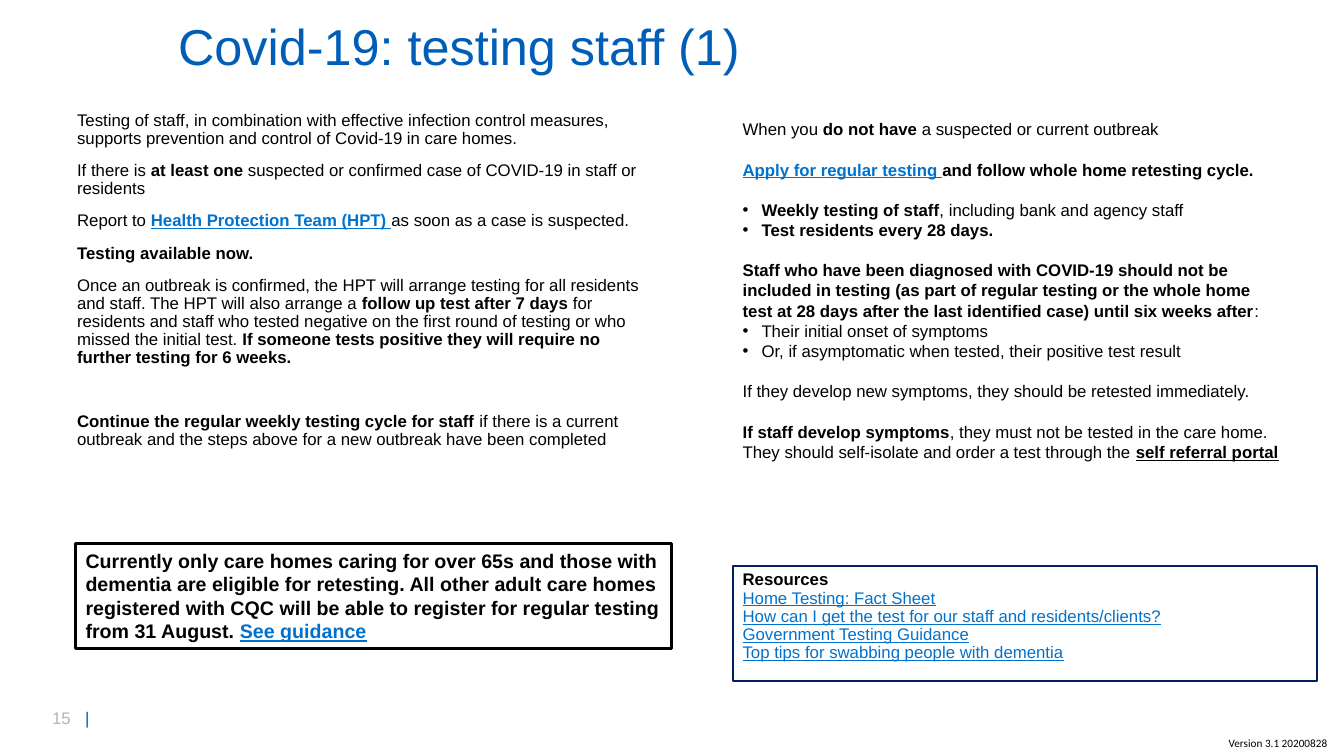
from lxml.etree import SubElement
from pptx import Presentation
from pptx.dml.color import RGBColor
from pptx.enum.shapes import MSO_SHAPE
from pptx.enum.text import MSO_ANCHOR, MSO_AUTO_SIZE, PP_ALIGN
from pptx.oxml.ns import qn
from pptx.util import Pt

BLACK, BLUE, LINK, NAVY, GREY = "000000", "005EB8", "0072CE", "002060", "ADB6BE"
LINE = 14.4  # height of one 12 pt line

# Run styles: bold, underlined, colour
PLAIN = (False, False, BLACK)
BOLD = (True, False, BLACK)
BOLD_LINK = (True, True, LINK)
PLAIN_LINK = (False, True, LINK)
BOLD_UNDERLINED = (True, True, BLACK)


def colour(value):
    return RGBColor.from_string(value)


def add_runs(paragraph, runs, size=12, font="Arial"):
    for text, (bold, underlined, ink) in runs:
        run = paragraph.add_run()
        run.text = text
        run.font.name, run.font.size = font, Pt(size)
        run.font.bold, run.font.underline = bold, underlined
        run.font.color.rgb = colour(ink)


def add_bullet(paragraph, indent=13.5):
    properties = paragraph._p.get_or_add_pPr()
    properties.set("marL", str(Pt(indent)))
    properties.set("indent", str(-Pt(indent)))
    SubElement(properties, qn("a:buFont"), typeface="Arial")
    SubElement(properties, qn("a:buChar"), char="•")


def fill_frame(frame, paragraphs, spacing=1.0, size=12):
    """Each paragraph is (space before, bulleted, runs)."""
    frame.word_wrap = True
    for number, (before, bulleted, runs) in enumerate(paragraphs):
        paragraph = frame.add_paragraph() if number else frame.paragraphs[0]
        paragraph.alignment = PP_ALIGN.LEFT
        paragraph.line_spacing = spacing
        paragraph.space_before = Pt(before)
        if bulleted:
            add_bullet(paragraph)
        add_runs(paragraph, runs, size)


def add_text_box(slide, box):
    return slide.shapes.add_textbox(*map(Pt, box)).text_frame


def add_outlined_box(slide, box, line, weight, anchor):
    panel = slide.shapes.add_shape(MSO_SHAPE.RECTANGLE, *map(Pt, box))
    panel.shadow.inherit = False
    panel.fill.background()
    panel.line.color.rgb = colour(line)
    panel.line.width = Pt(weight)
    panel.text_frame.vertical_anchor = anchor
    return panel.text_frame


def add_title(slide, box):
    title = slide.shapes.title
    title.left, title.top, title.width, title.height = map(Pt, box)
    frame = title.text_frame
    frame.auto_size = MSO_AUTO_SIZE.NONE
    frame.vertical_anchor = MSO_ANCHOR.MIDDLE
    fill_frame(frame, [(0, False, [("Covid-19: testing staff (1)", (False, False, BLUE))])],
               spacing=0.9, size=36)


def add_outbreak_column(slide, box):
    fill_frame(add_text_box(slide, box), [
        (0, False, [("Testing of staff, in combination with effective infection control measures, "
                     "supports prevention and control of Covid-19 in care homes.", PLAIN)]),
        (10, False, [("If there is ", PLAIN), ("at least one ", BOLD),
                     ("suspected or confirmed case of COVID-19 in staff or residents", PLAIN)]),
        (10, False, [("Report to ", PLAIN), ("Health Protection Team (HPT) ", BOLD_LINK),
                     ("as soon as a case is suspected.", PLAIN)]),
        (10, False, [("Testing available now.", BOLD)]),
        (10, False, [("Once an outbreak is confirmed, the HPT will arrange testing for all residents "
                      "and staff. The HPT will also arrange a ", PLAIN),
                     ("follow up test after 7 days ", BOLD),
                     ("for residents and staff who tested negative on the first round of testing "
                      "or who missed the initial test. ", PLAIN),
                     ("If someone tests positive they will require no further testing for 6 weeks.",
                      BOLD)]),
        (32.8, False, [("Continue the regular weekly testing cycle for staff ", BOLD),
                       ("if there is a current outbreak and the steps above for a new outbreak "
                        "have been completed", PLAIN)]),
    ], spacing=0.9)


def add_no_outbreak_column(slide, box):
    fill_frame(add_text_box(slide, box), [
        (0, False, [("When you ", PLAIN), ("do not have ", BOLD),
                    ("a suspected or current outbreak", PLAIN)]),
        (LINE, False, [("Apply for regular testing ", BOLD_LINK),
                       ("and follow whole home retesting cycle.", BOLD)]),
        (LINE, True, [("Weekly testing of staff", BOLD),
                      (", including bank and agency staff", PLAIN)]),
        (0, True, [("Test residents every 28 days.", BOLD)]),
        (LINE, False, [("Staff who have been diagnosed with COVID-19 should not be included in "
                        "testing (as part of regular testing or the whole home test at 28 days "
                        "after the last identified case) until six weeks after", BOLD),
                       (":", PLAIN)]),
        (0, True, [("Their initial onset of symptoms", PLAIN)]),
        (0, True, [("Or, if asymptomatic when tested, their positive test result", PLAIN)]),
        (LINE, False, [("If they develop new symptoms, they should be retested immediately.", PLAIN)]),
        (LINE, False, [("If staff develop symptoms", BOLD),
                       (", they must not be tested in the care home. They should self-isolate "
                        "and order a test through the ", PLAIN),
                       ("self referral portal", BOLD_UNDERLINED)]),
    ])


def add_eligibility_notice(slide, box):
    frame = add_outlined_box(slide, box, BLACK, 2.25, MSO_ANCHOR.MIDDLE)
    fill_frame(frame, [(0, False, [
        ("Currently only care homes caring for over 65s and those with dementia are eligible for "
         "retesting. All other adult care homes registered with CQC will be able to register for "
         "regular testing from 31 August. ", BOLD),
        ("See guidance", BOLD_LINK)])], size=14)


def add_resources(slide, box):
    links = ["Home Testing: Fact Sheet",
             "How can I get the test for our staff and residents/clients?",
             "Government Testing Guidance",
             "Top tips for swabbing people with dementia"]
    frame = add_outlined_box(slide, box, NAVY, 1.5, MSO_ANCHOR.TOP)
    fill_frame(frame, [(0, False, [("Resources", BOLD)])]
               + [(0, False, [(link, PLAIN_LINK)]) for link in links], spacing=0.9)


def add_page_number(slide, box):
    paragraph = add_text_box(slide, box).paragraphs[0]
    stops = SubElement(paragraph._p.get_or_add_pPr(), qn("a:tabLst"))
    SubElement(stops, qn("a:tab"), pos=str(Pt(23.5)), algn="l")
    add_runs(paragraph, [("15\t", (False, False, GREY)), ("|", (False, False, BLUE))])


def add_version(slide, box):
    frame = add_text_box(slide, box)
    frame.word_wrap = False
    add_runs(frame.paragraphs[0], [("Version 3.1 20200828", PLAIN)], size=8, font="Calibri")


def main():
    deck = Presentation()
    deck.slide_width, deck.slide_height = Pt(960), Pt(540)
    slide = deck.slides.add_slide(deck.slide_layouts[5])

    # Heading
    add_title(slide, (120, 9.4, 683.5, 51))
    # Guidance columns
    add_outbreak_column(slide, (48, 76.3, 423.4, 278))
    add_no_outbreak_column(slide, (523.4, 81.4, 398.2, 283.7))
    # Outlined boxes
    add_eligibility_notice(slide, (54, 388, 425.5, 75))
    add_resources(slide, (523.4, 404.6, 417.6, 82))
    # Footer
    add_page_number(slide, (30.2, 501.8, 67.7, 21.6))
    add_version(slide, (870.5, 522.7, 85.7, 17.3))

    deck.save("out.pptx")


if __name__ == "__main__":
    main()
